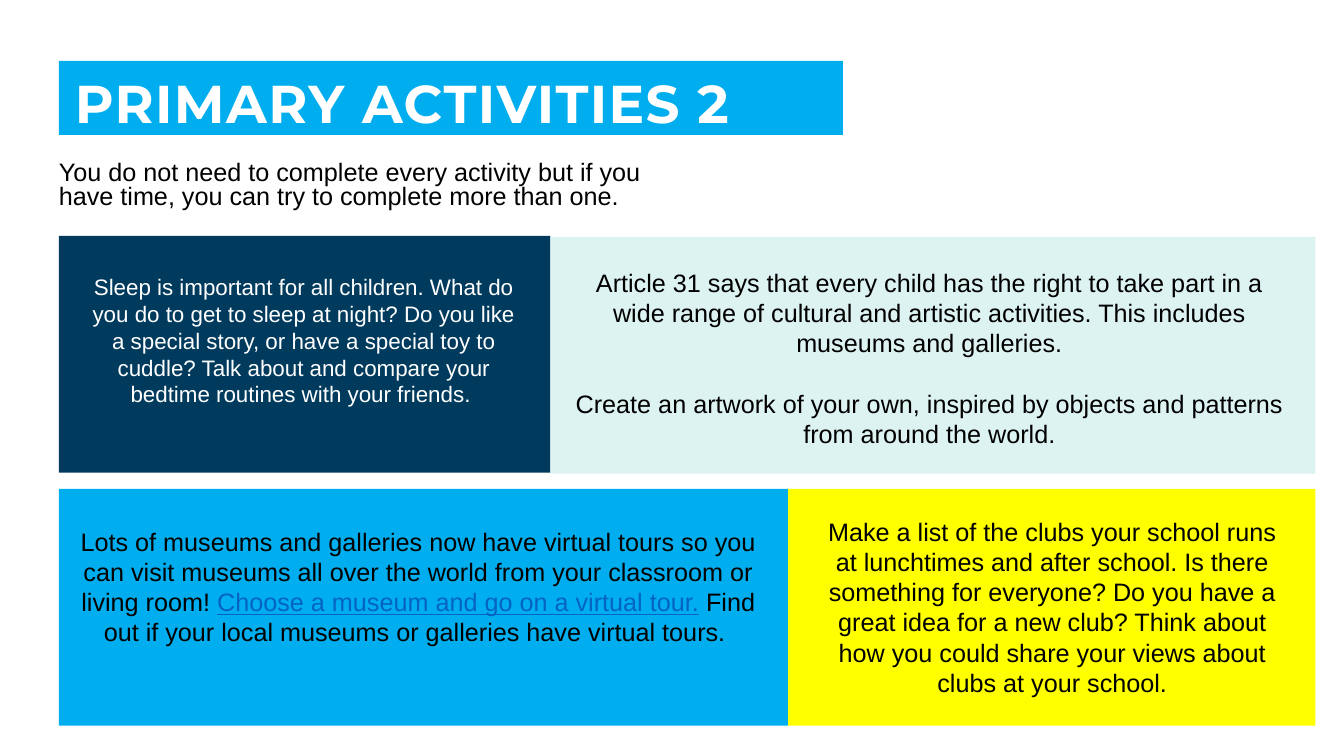
from pptx import Presentation
from pptx.dml.color import RGBColor
from pptx.enum.shapes import MSO_SHAPE
from pptx.enum.text import MSO_ANCHOR, MSO_AUTO_SIZE, PP_ALIGN
from pptx.util import Pt
from lxml import etree

RECT = MSO_SHAPE.RECTANGLE
MIDDLE, TOP = MSO_ANCHOR.MIDDLE, MSO_ANCHOR.TOP
LEFT, CENTER = PP_ALIGN.LEFT, PP_ALIGN.CENTER
NO_FIT = MSO_AUTO_SIZE.NONE
NS = "{http://schemas.openxmlformats.org/drawingml/2006/main}"

SKY, NAVY, MINT, YELLOW = "00AEEF", "003B5E", "DDF3F1", "FFFF00"
BLACK, WHITE, LINK = "000000", "FFFFFF", "0563C1"

LEFT_EDGE, RIGHT_EDGE = 42, 939.6
ROW_H = 169.2
ROW_1, ROW_2 = 168.5, 349.2
SPLIT_1, SPLIT_2 = 393.1, 563


def color(value):
    return RGBColor.from_string(value)


def place(sp, x, y, w, h):
    sp.left, sp.top, sp.width, sp.height = Pt(x), Pt(y), Pt(w), Pt(h)


def set_frame(tf, insets, anchor):
    tf.word_wrap = True
    tf.auto_size = NO_FIT
    tf.vertical_anchor = anchor
    tf.margin_left, tf.margin_top, tf.margin_right, tf.margin_bottom = map(Pt, insets)


def add_run(p, text, size, fill, font="Arial"):
    r = p.add_run()
    r.text = text
    r.font.name = font
    r.font.size = Pt(size)
    r.font.color.rgb = color(fill)
    return r


def add_title(s, box, text):
    sp = s.shapes.title
    place(sp, *box)
    sp.fill.solid()
    sp.fill.fore_color.rgb = color(SKY)
    tf = sp.text_frame
    set_frame(tf, (11.5, 11.5, 8.6, 0), MIDDLE)
    p = tf.paragraphs[0]
    p.alignment = LEFT
    p.line_spacing = 0.9
    r = add_run(p, text, 38, WHITE, "Montserrat")
    r.font.bold = True
    r.font._element.set("spc", "100")


def add_intro(s, box, text):
    sp = s.placeholders[1]
    place(sp, *box)
    tf = sp.text_frame
    set_frame(tf, (0, 3.6, 7.2, 3.6), TOP)
    p = tf.paragraphs[0]
    pPr = p._p.get_or_add_pPr()
    pPr.set("marL", "0")
    pPr.set("indent", "0")
    etree.SubElement(pPr, NS + "buNone")
    p.alignment = LEFT
    p.line_spacing = 0.8
    p.space_before = Pt(0)
    add_run(p, text, 18, BLACK)


def add_panel(s, box, fill, text_box, paragraphs, size=18):
    x, y, w, h = box
    sp = s.shapes.add_shape(RECT, Pt(x), Pt(y), Pt(w), Pt(h))
    sp.shadow.inherit = False
    sp.fill.solid()
    sp.fill.fore_color.rgb = color(fill)
    sp.line.fill.background()
    dx, dy, tw, th = text_box
    tb = s.shapes.add_textbox(Pt(x + dx), Pt(y + dy), Pt(tw), Pt(th))
    tf = tb.text_frame
    set_frame(tf, (7.2, 3.6, 7.2, 3.6), TOP)
    for i, runs in enumerate(paragraphs):
        p = tf.add_paragraph() if i else tf.paragraphs[0]
        p.alignment = CENTER
        if i:
            p.space_before = Pt(21.6)
        for text, fill_color in runs:
            r = add_run(p, text, size, fill_color)
            r.font.underline = fill_color == LINK


def main():
    prs = Presentation()
    prs.slide_width, prs.slide_height = Pt(960), Pt(540)
    s = prs.slides.add_slide(prs.slide_layouts[1])
    add_title(s, (LEFT_EDGE, 43.4, 560, 53), "PRIMARY ACTIVITIES 2")
    add_intro(s, (LEFT_EDGE, 112.3, 447, 44.6),
              "You do not need to complete every activity but if you have time, "
              "you can try to complete more than one.")
    add_panel(s, (LEFT_EDGE, ROW_1, SPLIT_1 - LEFT_EDGE, ROW_H), NAVY,
              (10.5, 23, 329, 104.4),
              [[("Sleep is important for all children. What do you do to get to sleep "
                 "at night? Do you like a special story, or have a special toy to cuddle? "
                 "Talk about and compare your bedtime routines with your friends. ", WHITE)]],
              size=16)
    add_panel(s, (SPLIT_1, ROW_1 + 0.7, RIGHT_EDGE - SPLIT_1, ROW_H), MINT,
              (10.1, 18, 521.3, 138.2),
              [[("Article 31 says that every child has the right to take part in a wide "
                 "range of cultural and artistic activities. This includes museums and "
                 "galleries.", BLACK)],
               [("Create an artwork of your own, inspired by objects and patterns from "
                 "around the world.", BLACK)]])
    add_panel(s, (LEFT_EDGE, ROW_2, SPLIT_2 - LEFT_EDGE, ROW_H), SKY,
              (-1, 23, 515.5, 94.3),
              [[("Lots of museums and galleries now have virtual tours so you can visit "
                 "museums all over the world from your classroom or living room! ", BLACK),
                ("Choose a museum and go on a virtual tour.", LINK),
                (" Find out if your local museums or galleries have virtual tours. ", BLACK)]])
    add_panel(s, (SPLIT_2, ROW_2, RIGHT_EDGE - SPLIT_2, ROW_H), YELLOW,
              (14.4, 15.8, 348.5, 138.2),
              [[("Make a list of the clubs your school runs at lunchtimes and after school. "
                 "Is there something for everyone? Do you have a great idea for a new club? "
                 "Think about how you could share your views about clubs at your school.",
                 BLACK)]])
    prs.save("out.pptx")


if __name__ == "__main__":
    main()
